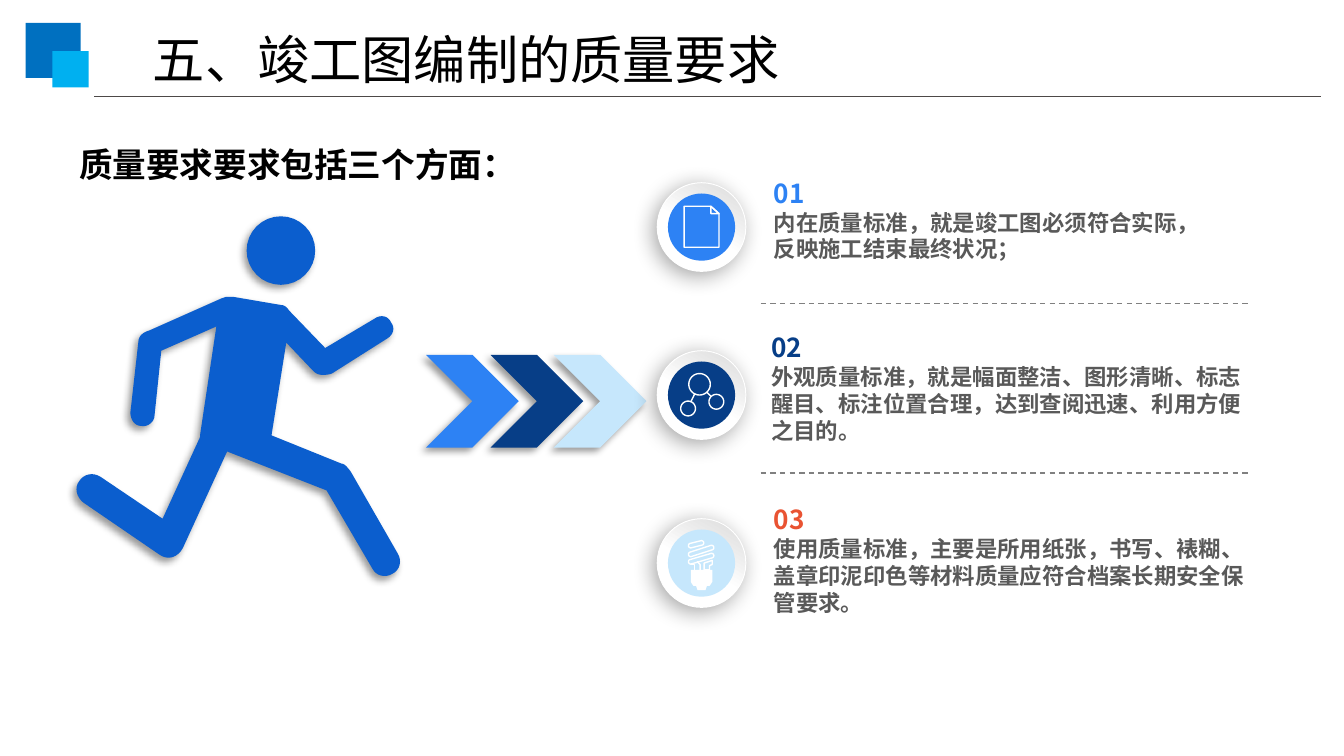
from dataclasses import dataclass
from math import atan2, cos, pi, sin

from lxml.etree import SubElement
from pptx import Presentation
from pptx.dml.color import RGBColor
from pptx.enum.dml import MSO_LINE_DASH_STYLE as Dash
from pptx.enum.shapes import MSO_CONNECTOR as Connector, MSO_SHAPE as Preset
from pptx.enum.text import MSO_ANCHOR as Anchor, PP_ALIGN as Align
from pptx.oxml.ns import qn
from pptx.util import Pt

SCALE = 9144  # EMU in one px, 100 px to the inch
SLIDE_WIDTH = 1000 * SCALE
SLIDE_HEIGHT = SLIDE_WIDTH * 9 // 16
Point = tuple[float, float]
Contour = list[Point]


@dataclass(frozen=True)
class Theme:
    cjk: str = "Noto Sans CJK SC"
    latin: str = "Calibri"
    black: str = "000000"
    white: str = "FFFFFF"
    silver: str = "D9D9D9"
    body: str = "595959"
    rule: str = "4D4948"
    divider: str = "808080"
    logo_dark: str = "0070C0"
    logo_light: str = "00B0F0"
    runner: str = "0B5ECE"
    blue: str = "2D82F4"
    navy: str = "073E87"
    pale: str = "C6E7FC"
    orange: str = "E95332"
    title_size: float = 28
    heading_size: float = 18
    number_size: float = 14
    body_size: float = 12
    number_leading: float = 16.8
    body_leading: float = 14.4
    line_width: float = 0.75


THEME = Theme()


@dataclass(frozen=True)
class Box:
    left: int
    top: int
    width: int
    height: int

    def emu(self) -> list[int]:
        return [n * SCALE for n in (self.left, self.top, self.width, self.height)]


@dataclass(frozen=True)
class Shadow:
    alpha: int
    blur: int
    distance: int
    direction: int = 135


@dataclass(frozen=True)
class Aspect:
    number: str
    text: str
    box: Box
    number_color: str
    badge_color: str
    outline: list[Contour]
    solid: list[Contour]


def rgb(color: str) -> RGBColor:
    return RGBColor.from_string(color)


def add_shadow(shape, shadow: Shadow) -> None:
    effects = shape._element.spPr.find(qn("a:effectLst"))
    outer = SubElement(effects, qn("a:outerShdw"), blurRad=str(Pt(shadow.blur)),
                       dist=str(Pt(shadow.distance)), dir=str(shadow.direction * 60000),
                       algn="tr", rotWithShape="0")
    color = SubElement(outer, qn("a:srgbClr"), val=THEME.black)
    SubElement(color, qn("a:alpha"), val=str(shadow.alpha * 1000))


def paint(shape, fill: str | None, line: str | None = None) -> None:
    shape.shadow.inherit = False
    if fill:
        shape.fill.solid()
        shape.fill.fore_color.rgb = rgb(fill)
    else:
        shape.fill.background()
    if line:
        shape.line.color.rgb = rgb(line)
        shape.line.width = Pt(THEME.line_width)
    else:
        shape.line.fill.background()


def add_preset(shapes, preset: Preset, box: Box, fill: str):
    shape = shapes.add_shape(preset, *box.emu())
    paint(shape, fill)
    return shape


def add_outline(shapes, contours: list[Contour], origin: Point = (0, 0)):
    """Build one freeform from closed contours placed around origin."""
    placed = [[(round((x + origin[0]) * SCALE), round((y + origin[1]) * SCALE))
               for x, y in contour] for contour in contours]
    builder = shapes.build_freeform(*placed[0][0], scale=1.0)
    for index, contour in enumerate(placed):
        if index:
            builder.move_to(*contour[0])
        builder.add_line_segments(contour[1:], close=True)
    return builder.convert_to_shape()


def add_rule(shapes, left: int, right: int, y: int, color: str, dashed: bool = False) -> None:
    line = shapes.add_connector(Connector.STRAIGHT, left * SCALE, y * SCALE,
                                right * SCALE, y * SCALE)
    line.line.color.rgb = rgb(color)
    line.line.width = Pt(THEME.line_width)
    if dashed:
        line.line.dash_style = Dash.DASH
    SubElement(line._element.spPr, qn("a:effectLst"))


def add_text(shapes, box: Box, text: str):
    frame = shapes.add_textbox(*box.emu()).text_frame
    frame.word_wrap = True
    frame.text = text
    return frame


def style(paragraph, size: float, color: str, bold: bool, latin: str = THEME.cjk) -> None:
    for run in paragraph.runs:
        run.font.size, run.font.bold, run.font.name = Pt(size), bold, latin
        run.font.color.rgb = rgb(color)
        SubElement(run._r.get_or_add_rPr(), qn("a:ea"), typeface=THEME.cjk)


def arc(x: float, y: float, radius: float, start: float = 0, sweep: float = 2 * pi) -> Contour:
    steps = 32
    angles = [start + sweep * step / steps for step in range(steps + 1)]
    return [(x + radius * cos(angle), y + radius * sin(angle)) for angle in angles]


def pill(first: Point, last: Point, radius: float) -> Contour:
    angle = atan2(last[1] - first[1], last[0] - first[0])
    return arc(*last, radius, angle - pi / 2, pi) + arc(*first, radius, angle + pi / 2, pi)


def flatten(segments: list[tuple]) -> Contour:
    """Turn points and cubic curves (six numbers) into a polyline."""
    points: Contour = []
    for segment in segments:
        if len(segment) == 2:
            points.append(segment)
            continue
        x0, y0 = points[-1]
        x1, y1, x2, y2, x3, y3 = segment
        for t in (n / 8 for n in range(1, 9)):
            a, b, c, d = (1 - t) ** 3, 3 * t * (1 - t) ** 2, 3 * t * t * (1 - t), t ** 3
            points.append((a * x0 + b * x1 + c * x2 + d * x3, a * y0 + b * y1 + c * y2 + d * y3))
    return points


RUNNER = flatten([
    (168, 221), (171, 221), (174, 221), (209, 227), (211, 227, 213, 228, 215, 231),
    (242, 259), (279, 237), (283, 234, 289, 235, 291, 240), (294, 244, 293, 249, 288, 252),
    (247, 278), (244, 279, 242, 279, 240, 279), (237, 279, 235, 278, 233, 276),
    (213, 255), (202, 324), (254, 345), (256, 345, 258, 347, 261, 351),
    (296, 412), (299, 417, 298, 424, 292, 427), (287, 430, 280, 429, 277, 423),
    (243, 365), (169, 336), (136, 408), (132, 415, 125, 417, 119, 413),
    (62, 374), (57, 370, 55, 363, 59, 358), (62, 353, 69, 351, 75, 355),
    (121, 386), (149, 325), (149, 323), (161, 243), (120, 261), (115, 309),
    (115, 314, 110, 318, 105, 317), (100, 317, 97, 312, 97, 307),
    (103, 254), (103, 250, 107, 247, 111, 246), (165, 222)])
RUNNER_HEAD = arc(209, 186.5, 25.5)

DOCUMENT = [[(-13, -15.5), (7, -15.5), (13, -10), (13, 15), (-13, 15)],
            [(7, -15.5), (13, -10), (7, -10)]]
MOLECULE = [arc(-1.5, -8, 8), arc(-10, 10, 5.5), arc(11, 5, 5.5),
            [(4, -2), (7, 1)], [(-5, -1), (-8, 5)]]
BULB_COIL = [pill((-8, -13), (0, -15), 1.7), pill((-8, -6.5), (7.5, -11.5), 1.7),
             pill((-8, -1), (7.5, -5.5), 1.7),
             [(-8, 1), (-5, 1), (-5, 5), (-5, 1)], [(-3, -1), (-1, 1), (-1, 5), (-1, 1)],
             [(2, 5), (2, 0), (8, -2), (8, 1), (6, 2), (6, 5)]]
BULB_BASE = [[(-8, 5), (8, 5), (8, 14), (6, 17), (4, 17), (3, 20),
              (-3, 20), (-4, 17), (-6, 17), (-8, 14)]]

ASPECTS = [
    Aspect("01", "内在质量标准，就是竣工图必须符合实际，反映施工结束最终状况；",
           Box(566, 127, 347, 74), THEME.blue, THEME.blue, DOCUMENT, []),
    Aspect("02", "外观质量标准，就是幅面整洁、图形清晰、标志醒目、标注位置合理，达到查阅迅速、利用方便之目的。",
           Box(564, 242, 385, 94), THEME.navy, THEME.navy, MOLECULE, []),
    Aspect("03", "使用质量标准，主要是所用纸张，书写、裱糊、盖章印泥印色等材料质量应符合档案长期安全保管要求。",
           Box(566, 370, 383, 94), THEME.orange, THEME.pale, BULB_COIL, BULB_BASE)]


def add_badge(shapes, top: int, aspect: Aspect) -> None:
    left, size, inset = 489, 66, 8
    group = shapes.add_group_shape().shapes
    ring = add_preset(group, Preset.OVAL, Box(left, top, size, size), THEME.white)
    ring.fill.gradient()
    ring.fill.gradient_angle = 60
    stops = zip(ring.fill.gradient_stops, (0.45, 1), (THEME.white, THEME.silver))
    for stop, position, color in stops:
        stop.position, stop.color.rgb = position, rgb(color)
    ring.line.color.rgb = rgb(THEME.white)
    ring.line.width = Pt(0.5)
    add_shadow(ring, Shadow(34, 12, 3))
    inner = size - 2 * inset
    add_preset(group, Preset.OVAL, Box(left + inset, top + inset, inner, inner), aspect.badge_color)
    center = (left + size / 2, top + size / 2)
    paint(add_outline(group, aspect.outline, center), None, THEME.white)
    if aspect.solid:
        paint(add_outline(group, aspect.solid, center), THEME.white)


def add_aspect_text(shapes, aspect: Aspect) -> None:
    number, body = add_text(shapes, aspect.box, f"{aspect.number}\n{aspect.text}").paragraphs
    number.line_spacing, body.line_spacing = Pt(THEME.number_leading), Pt(THEME.body_leading)
    style(number, THEME.number_size, aspect.number_color, True)
    style(body, THEME.body_size, THEME.body, True)


def main() -> None:
    presentation = Presentation()
    presentation.slide_width, presentation.slide_height = SLIDE_WIDTH, SLIDE_HEIGHT
    shapes = presentation.slides.add_slide(presentation.slide_layouts[6]).shapes
    soft = Shadow(40, 4, 3)

    add_preset(shapes, Preset.RECTANGLE, Box(19, 17, 41, 41), THEME.logo_dark)
    add_preset(shapes, Preset.RECTANGLE, Box(39, 38, 27, 27), THEME.logo_light)
    add_rule(shapes, 70, 983, 72, THEME.rule)
    title = add_text(shapes, Box(104, 15, 553, 57), "五、竣工图编制的质量要求")
    style(title.paragraphs[0], THEME.title_size, THEME.black, False)
    heading = add_text(shapes, Box(49, 102, 351, 40), "质量要求要求包括三个方面：")
    heading.paragraphs[0].alignment = Align.JUSTIFY
    style(heading.paragraphs[0], THEME.heading_size, THEME.black, True, THEME.latin)
    title.vertical_anchor = heading.vertical_anchor = Anchor.MIDDLE

    for left, color in ((412, THEME.pale), (365, THEME.navy), (317, THEME.blue)):
        add_shadow(add_preset(shapes, Preset.CHEVRON, Box(left, 264, 69, 69), color), soft)
    runner = add_outline(shapes, [RUNNER, RUNNER_HEAD])
    paint(runner, THEME.runner)
    add_shadow(runner, soft)

    for index, aspect in enumerate(ASPECTS):
        add_badge(shapes, 136 + 125 * index, aspect)
        add_aspect_text(shapes, aspect)
    for y in (226, 352):
        add_rule(shapes, 566, 929, y, THEME.divider, dashed=True)
    presentation.save("out.pptx")


if __name__ == "__main__":
    main()
